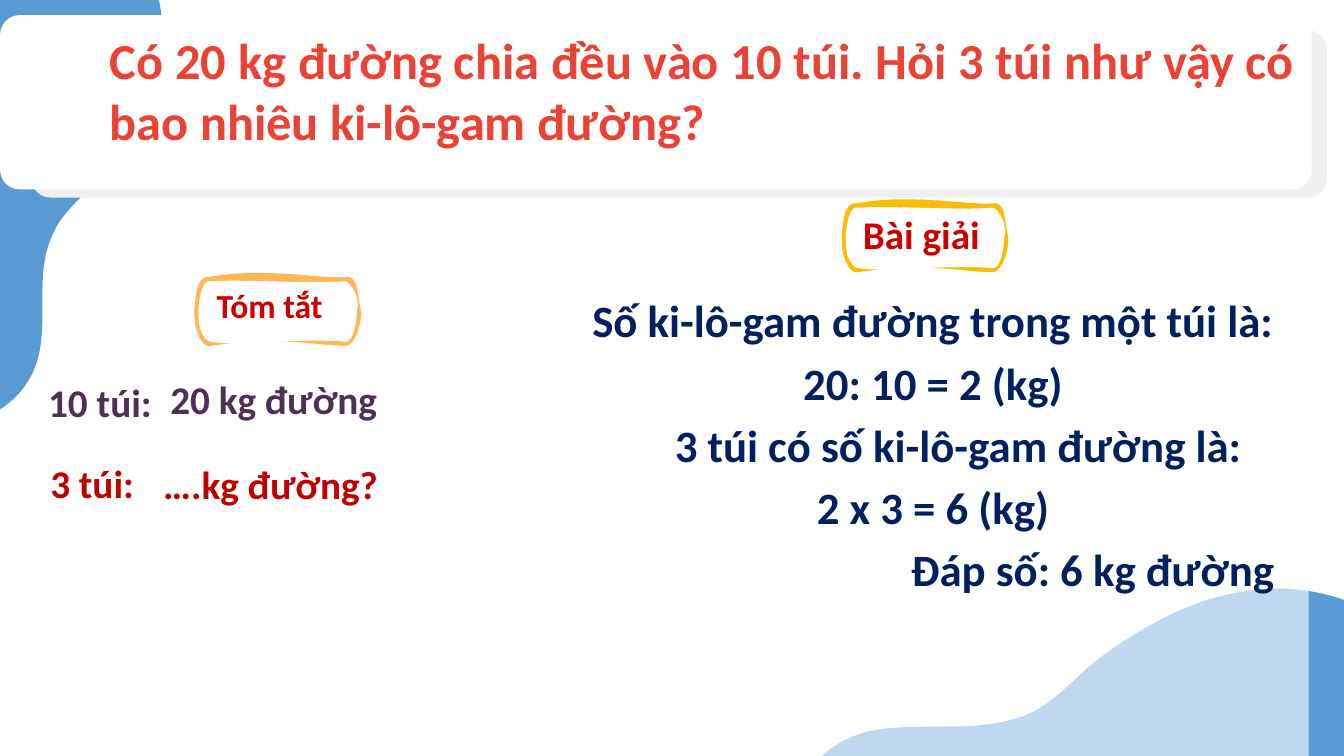
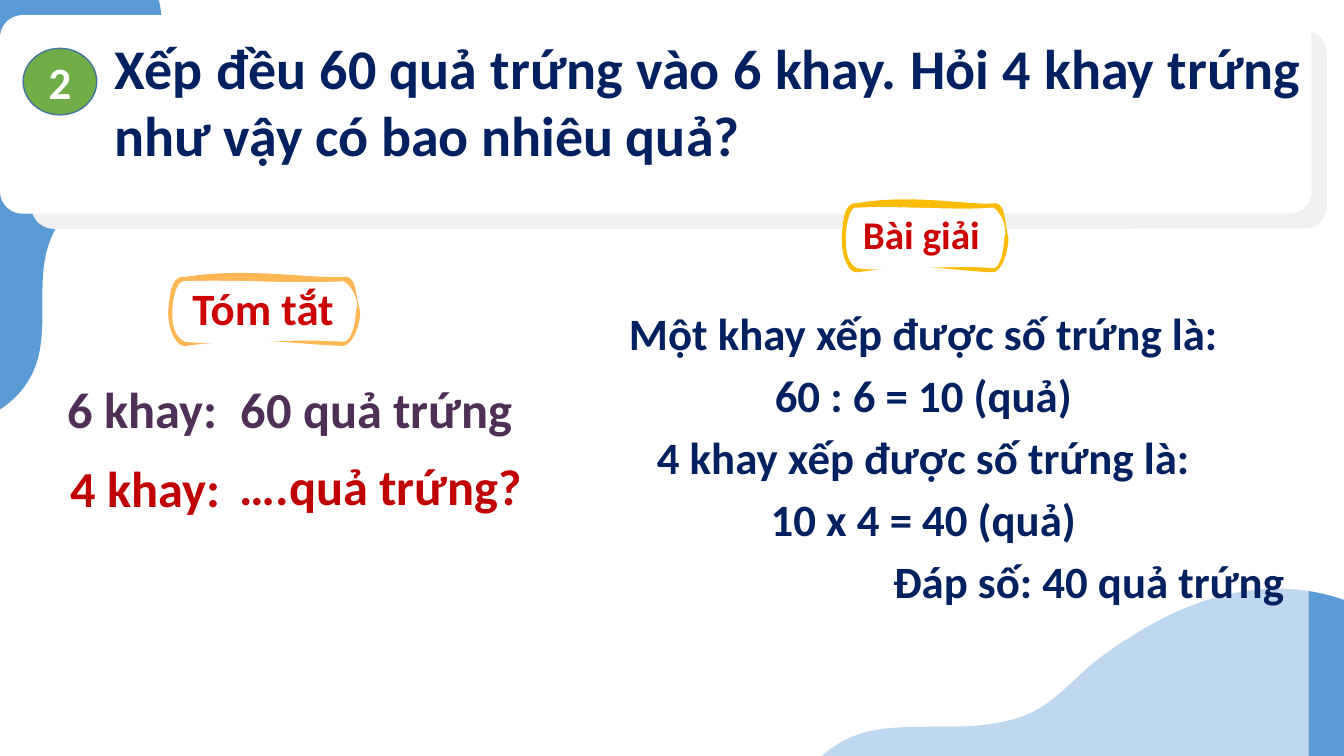
from dataclasses import dataclass
from pptx import Presentation
from pptx.dml.color import RGBColor
from pptx.enum.shapes import MSO_SHAPE
from pptx.enum.text import MSO_ANCHOR, MSO_AUTO_SIZE, PP_ALIGN
from pptx.oxml.ns import qn
from pptx.util import Inches, Pt
from lxml.etree import SubElement


@dataclass(frozen=True)
class Theme:
    font: str = "Calibri"
    white: str = "FFFFFF"
    blue: str = "5B9BD5"
    shade: str = "F1F0F0"
    coral: str = "EA4335"
    navy: str = "002060"
    plum: str = "4F2F57"
    red: str = "C00000"
    label: str = "CC0000"
    orange: str = "FFB655"
    gold: str = "FBBC05"
    green: str = "70AD47"
    rim: str = "43739E"
    small: int = 24
    mid: int = 28
    body: int = 32
    large: int = 36
    huge: int = 40


T = Theme()

HILL = [(12.67, 5.84),
        [(13.04, 5.84), (13.4, 5.94), (13.72, 6.14)], (13.72, 8.1), (7.82, 8.1),
        [(7.88, 7.71), (8.19, 7.35), (8.64, 7.25)],
        [(8.85, 7.21), (9.06, 7.21), (9.27, 7.21)],
        [(9.29, 7.21), (9.31, 7.21), (9.33, 7.21)],
        [(9.61, 7.21), (9.89, 7.2), (10.16, 7.1)],
        [(10.46, 6.98), (10.65, 6.73), (10.89, 6.54)],
        [(11.16, 6.34), (11.45, 6.16), (11.76, 6.03)],
        [(12.06, 5.91), (12.37, 5.84), (12.67, 5.84)]]
WAVE = [(-0.89, 0.86),
        [(-1.18, 0.86), (-1.47, 0.94), (-1.72, 1.12)], (-1.72, 2.83), (2.98, 2.83),
        [(2.94, 2.49), (2.69, 2.18), (2.33, 2.09)],
        [(2.16, 2.05), (2, 2.05), (1.83, 2.05)],
        [(1.81, 2.05), (1.8, 2.05), (1.78, 2.05)],
        [(1.56, 2.05), (1.34, 2.05), (1.12, 1.95)],
        [(0.88, 1.85), (0.73, 1.63), (0.54, 1.47)],
        [(0.33, 1.29), (0.1, 1.13), (-0.15, 1.02)],
        [(-0.39, 0.91), (-0.64, 0.86), (-0.89, 0.86)]]
STROKE = [(0, 0.3),
          [(0.01, 0.17), (0.02, -0.03), (0.11, 0)],
          [(0.62, -0.1), (1.21, 0.02), (1.45, 0)],
          [(1.53, -0.03), (1.52, 0.14), (1.56, 0.3)], (1.56, 0.3),
          [(1.56, 0.46), (1.49, 0.59), (1.45, 0.6)],
          [(0.97, 0.58), (0.81, 0.5), (0.11, 0.6)],
          [(0.08, 0.61), (0, 0.52), (0, 0.3)], (0, 0.3)]
INNER = [(0, 0.3),
         [(0, 0.14), (0.05, -0.02), (0.11, 0)],
         [(0.56, -0.02), (1.1, 0.03), (1.45, 0)],
         [(1.51, 0.03), (1.6, 0.18), (1.56, 0.3)], (1.56, 0.3),
         [(1.55, 0.49), (1.5, 0.61), (1.45, 0.6)],
         [(0.86, 0.56), (0.48, 0.65), (0.11, 0.6)],
         [(0.04, 0.57), (-0.01, 0.46), (0, 0.3)], (0, 0.3)]
FADE = [(0.45, 3.4), (5.03, 3.35), (5.42, 5.66), (0.07, 5.66), (0.45, 3.4)]


def paint(shape, fill, line=None, width=1, alpha=None):
    shape.shadow.inherit = False
    shape.fill.solid()
    shape.fill.fore_color.rgb = RGBColor.from_string(fill)
    if alpha:
        tint = shape._element.spPr.find(".//" + qn("a:srgbClr"))
        SubElement(tint, qn("a:alpha")).set("val", str(alpha * 1000))
    if line:
        shape.line.color.rgb = RGBColor.from_string(line)
        shape.line.width = Pt(width)
    else:
        shape.line.fill.background()
    return shape


def block(slide, kind, box, fill, **look):
    shape = slide.shapes.add_shape(kind, *map(Inches, box))
    return paint(shape, fill, **look)


def draw(trail, parts, start, scale, size, flags):
    track = SubElement(trail, qn("a:path"), w=str(size[0]), h=str(size[1]), **flags)
    for spot, part in enumerate(parts):
        bend = isinstance(part, list)
        verb = "a:cubicBezTo" if bend else "a:lnTo" if spot else "a:moveTo"
        move = SubElement(track, qn(verb))
        for x, y in part if bend else [part]:
            SubElement(move, qn("a:pt"), x=str(Inches((x - start[0]) * scale)),
                       y=str(Inches(y - start[1])))
    SubElement(track, qn("a:close"))


def curve(slide, box, layers, fill, start=None, scale=1, **look):
    left, top, width, height = map(Inches, box)
    pen = slide.shapes.build_freeform(left, top, scale=1)
    pen.add_line_segments([(left + width, top), (left + width, top + height),
                           (left, top + height)], close=True)
    shape = pen.convert_to_shape()
    trail = shape._element.spPr.find(".//" + qn("a:pathLst"))
    for track in list(trail):
        trail.remove(track)
    for parts, flags in layers:
        draw(trail, parts, start or box[:2], scale, (width, height), flags)
    return paint(shape, fill, **look)


def write(para, text, size, color):
    run = para.add_run()
    run.text = text
    font = run.font
    font.name, font.size, font.bold = T.font, Pt(size), True
    font.color.rgb = RGBColor.from_string(color)


def panel(slide, box, wrap):
    frame = slide.shapes.add_textbox(*map(Inches, box)).text_frame
    frame.word_wrap = wrap
    frame.auto_size = MSO_AUTO_SIZE.SHAPE_TO_FIT_TEXT
    return frame


def words(slide, box, text, size, color, wrap=False):
    para = panel(slide, box, wrap).paragraphs[0]
    write(para, text, size, color)
    return para


def base(layout, slide):
    hill = curve(slide, (7.82, 5.84, 5.9, 2.26), [(HILL, {})], T.blue)
    wave = curve(slide, (-1.72, 0.85, 4.7, 1.98), [(WAVE, {})], T.blue)
    wave.rotation = 90
    for mark, shape in enumerate((hill, wave), 20):
        shape._element.nvSpPr.cNvPr.set("id", str(mark))
        layout.shapes._spTree.append(shape._element)


def banner(slide, back, front, place, text, size, color):
    for box, fill in ((back, T.shade), (front, T.white)):
        block(slide, MSO_SHAPE.ROUNDED_RECTANGLE, box, fill).adjustments[0] = 0.114
    para = words(slide, place, text, size, color, True)
    para.alignment = PP_ALIGN.JUSTIFY
    para.space_before = para.space_after = Pt(6)


def tag(slide, box, line, place, text, size):
    layers = [(STROKE, {"fill": "none"}), (INNER, {"stroke": "0"})]
    curve(slide, box, layers, T.white, (0, 0), box[2] / 1.56, line=line, width=6)
    words(slide, place, text, size, T.label)


def brief(slide, rows, size):
    for color, cells in zip((T.plum, T.red), rows):
        for spot, (box, text) in enumerate(cells):
            words(slide, box, text, size, color, color == T.red and spot == 0)


def answer(slide, box, lines, dent):
    frame = panel(slide, box, True)
    last = len(lines) - 1
    for spot, text in enumerate(lines):
        para = frame.add_paragraph() if spot else frame.paragraphs[0]
        para.alignment = PP_ALIGN.RIGHT if spot == last else PP_ALIGN.CENTER
        para.space_after = Pt(6)
        if spot == 2 and dent:
            para._p.get_or_add_pPr().set("marL", str(Inches(dent)))
        write(para, text, T.body, T.navy)


def badge(slide, box, text):
    disc = block(slide, MSO_SHAPE.OVAL, box, T.green, line=T.rim)
    frame = disc.text_frame
    frame.vertical_anchor = MSO_ANCHOR.MIDDLE
    para = frame.paragraphs[0]
    para.alignment = PP_ALIGN.CENTER
    write(para, text, T.body, T.white)


def lesson(slide, head, note, rows, size, reply, mark=None):
    banner(slide, *head)
    block(slide, MSO_SHAPE.RECTANGLE, (5.49, 2.5, 7.49, 5), T.white, alpha=62)
    curve(slide, (0.07, 3.35, 5.34, 2.31), [(FADE, {})], T.white, alpha=55)
    tag(slide, *note)
    brief(slide, rows, size)
    tag(slide, (8.39, 2.06, 1.57, 0.6), T.gold, (8.46, 2.04, 1.38, 0.57), "Bài giải", T.mid)
    answer(slide, *reply)
    if mark:
        badge(slide, (0.23, 0.48, 0.73, 0.66), mark)


def main():
    deck = Presentation()
    deck.slide_width, deck.slide_height = Inches(13.33), Inches(7.5)
    blank = deck.slide_layouts[6]
    first, second = [deck.slides.add_slide(blank) for _ in range(2)]
    base(blank, first)
    lesson(
        first,
        ((0.31, 0.3, 12.85, 1.66), (0, 0.15, 13.01, 1.73), (0.99, 0.24, 11.96, 1.31),
         "Có 20 kg đường chia đều vào 10 túi. Hỏi 3 túi như vậy có bao nhiêu ki-lô-gam đường?",
         T.large, T.coral),
        ((1.97, 2.79, 1.57, 0.6), T.orange, (2.05, 2.78, 1.26, 0.5), "Tóm tắt", T.small),
        ((((0.38, 3.7, 1.24, 0.57), "10 túi:"), ((1.59, 3.67, 2.28, 0.57), "20 kg đường")),
         (((0.4, 4.51, 4.25, 0.57), "3 túi:"), ((1.52, 4.52, 2.35, 0.57), "….kg đường?"))),
        T.mid,
        ((5.77, 2.86, 6.97, 3.13),
         ("Số ki-lô-gam đường trong một túi là:", "20: 10 = 2 (kg)",
          "3 túi có số ki-lô-gam đường là:", "2 x 3 = 6 (kg)", "Đáp số: 6 kg đường"), 0.5))
    lesson(
        second,
        ((0.31, 0.3, 12.85, 1.97), (0, 0.15, 13.01, 1.97), (1.04, 0.28, 11.96, 1.45),
         "Xếp đều 60 quả trứng vào 6 khay. Hỏi 4 khay trứng như vậy có bao nhiêu quả?",
         T.huge, T.navy),
        ((1.71, 2.79, 1.82, 0.6), T.orange, (1.81, 2.74, 1.62, 0.64), "Tóm tắt", T.body),
        ((((0.57, 3.7, 1.7, 0.71), "6 khay:"), ((2.29, 3.7, 2.93, 0.71), "60 quả trứng")),
         (((0.6, 4.49, 3.83, 0.71), "4 khay:"), ((2.28, 4.47, 3.03, 0.71), "….quả trứng?"))),
        T.large,
        ((5.48, 2.98, 7.36, 3.13),
         ("Một khay xếp được số trứng là:", "60 : 6 = 10 (quả)",
          "4 khay xếp được số trứng là:", "10 x 4 = 40 (quả)", "Đáp số: 40 quả trứng"), 0),
        "2")
    deck.save("out.pptx")


if __name__ == "__main__":
    main()
